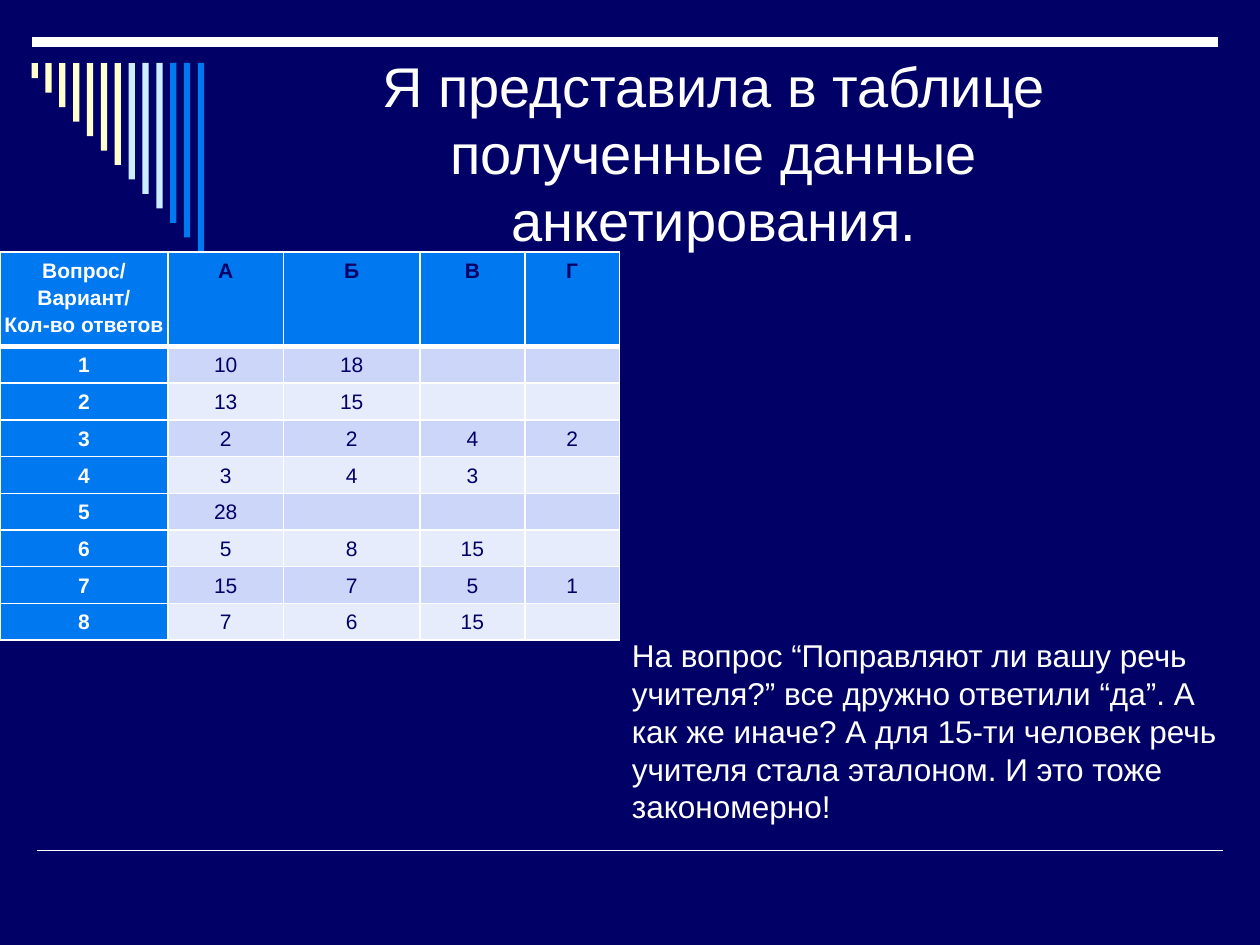
from copy import deepcopy

from lxml import etree
from pptx import Presentation
from pptx.dml.color import RGBColor
from pptx.enum.shapes import MSO_CONNECTOR, MSO_SHAPE
from pptx.enum.text import MSO_ANCHOR, PP_ALIGN
from pptx.oxml.ns import qn
from pptx.util import Pt

STRAIGHT = MSO_CONNECTOR.STRAIGHT
RECTANGLE = MSO_SHAPE.RECTANGLE
MIDDLE, TOP = MSO_ANCHOR.MIDDLE, MSO_ANCHOR.TOP
CENTER, LEFT = PP_ALIGN.CENTER, PP_ALIGN.LEFT

NAVY, WHITE, BLUE = "000066", "FFFFFF", "0078F0"
CREAM, PALE_BLUE = "FFFFCC", "CCECFF"
BAND_COLORS = ["CCD6F9", "E7ECFC"]
BAR_COLORS = [CREAM] * 7 + [PALE_BLUE] * 3 + [BLUE] * 3

COLUMN_WIDTHS = [96, 66, 78, 60, 54]
HEADER_HEIGHT, ROW_HEIGHT = 54, 21
ANSWERS = [
    ["Вопрос/\nВариант/\nКол-во ответов", "А", "Б", "В", "Г"],
    ["1", "10", "18", "", ""],
    ["2", "13", "15", "", ""],
    ["3", "2", "2", "4", "2"],
    ["4", "3", "4", "3", ""],
    ["5", "28", "", "", ""],
    ["6", "5", "8", "15", ""],
    ["7", "15", "7", "5", "1"],
    ["8", "7", "6", "15", ""],
]
TITLE = "Я представила в таблице полученные данные анкетирования."
COMMENT = (
    "На вопрос “Поправляют ли вашу речь учителя?” все дружно ответили “да”. "
    "А как же иначе? А для 15-ти человек речь учителя стала эталоном. "
    "И это тоже закономерно!"
)


def rgb(code):
    """Turn a hex string into a colour."""
    return RGBColor.from_string(code)


def paint(target, code):
    """Give a shape, cell or background a solid fill."""
    target.fill.solid()
    target.fill.fore_color.rgb = rgb(code)


def write(frame, text, size=12, color=WHITE, bold=False, align=LEFT, spacing=None):
    """Write one formatted paragraph, keeping its line breaks and empty height."""
    paragraph = frame.paragraphs[0]
    paragraph.alignment = align
    if spacing:
        paragraph.line_spacing = spacing
    for index, line in enumerate(text.split("\n")):
        if index:
            paragraph.add_line_break()
        run = paragraph.add_run()
        run.text = line
        run.font.name = "Arial"
        run.font.size = Pt(size)
        run.font.bold = bold
        run.font.color.rgb = rgb(color)
    properties = run.font._rPr
    for line_break in paragraph._p.findall(qn("a:br")):
        line_break.append(deepcopy(properties))
    ending = deepcopy(properties)
    ending.tag = qn("a:endParaRPr")
    paragraph._p.append(ending)
    if not text:
        paragraph._p.remove(run._r)


def add_text(slide, text, left, top, width, height, anchor=TOP, **style):
    """Add a wrapping text box."""
    box = slide.shapes.add_textbox(Pt(left), Pt(top), Pt(width), Pt(height))
    box.text_frame.word_wrap = True
    box.text_frame.vertical_anchor = anchor
    write(box.text_frame, text, **style)


def add_rule(slide, left, right, y, weight):
    """Add a horizontal white line."""
    rule = slide.shapes.add_connector(STRAIGHT, Pt(left), Pt(y), Pt(right), Pt(y))
    rule.line.color.rgb = rgb(WHITE)
    rule.line.width = Pt(weight)
    etree.SubElement(rule._element.spPr, qn("a:effectLst"))


def add_bars(slide, left, top):
    """Add the group of hanging bars that grow to the right."""
    group = slide.shapes.add_group_shape()
    for index, color in enumerate(BAR_COLORS):
        bar = group.shapes.add_shape(
            RECTANGLE, Pt(left + 7.92 * index), Pt(top), Pt(3.6), Pt(8.64 + 8.28 * index)
        )
        bar.shadow.inherit = False
        paint(bar, color)
        bar.line.fill.background()


def add_borders(cell, **weights):
    """Draw white cell borders, with the weights given by side."""
    properties = cell._tc.get_or_add_tcPr()
    for index, (side, weight) in enumerate(weights.items()):
        border = etree.Element(qn(f"a:ln{side}"), w=str(Pt(weight)))
        fill = etree.SubElement(border, qn("a:solidFill"))
        etree.SubElement(fill, qn("a:srgbClr"), val=WHITE)
        properties.insert(index, border)


def fill_cell(cell, text, row, column):
    """Style and fill one cell by its place in the table."""
    is_heading = row == 0 or column == 0
    cell.margin_left = cell.margin_right = Pt(2.16)
    cell.margin_top = cell.margin_bottom = Pt(2.16)
    paint(cell, BLUE if is_heading else BAND_COLORS[(row - 1) % 2])
    add_borders(cell, L=1, R=1, T=3 if row == 1 else 1, B=3 if row == 0 else 1)
    write(
        cell.text_frame,
        text,
        color=WHITE if column == 0 else NAVY,
        bold=is_heading,
        align=CENTER,
        spacing=1.15,
    )


def add_answers(slide, left, top):
    """Add the table of survey answers."""
    height = HEADER_HEIGHT + ROW_HEIGHT * (len(ANSWERS) - 1)
    table = slide.shapes.add_table(
        len(ANSWERS), len(COLUMN_WIDTHS), Pt(left), Pt(top), Pt(sum(COLUMN_WIDTHS)), Pt(height)
    ).table
    for column, width in enumerate(COLUMN_WIDTHS):
        table.columns[column].width = Pt(width)
    for row, values in enumerate(ANSWERS):
        table.rows[row].height = Pt(ROW_HEIGHT if row else HEADER_HEIGHT)
        for column, text in enumerate(values):
            fill_cell(table.cell(row, column), text, row, column)


def main():
    """Build the slide and save it."""
    deck = Presentation()
    deck.slide_width, deck.slide_height = Pt(720), Pt(540)
    slide = deck.slides.add_slide(deck.slide_layouts[6])
    paint(slide.background, NAVY)
    add_rule(slide, 21, 699, 486, weight=1)
    add_rule(slide, 18, 696, 24, weight=6)
    add_bars(slide, 18, 36)
    add_text(slide, TITLE, 132, 36, 552, 102, anchor=MIDDLE, size=32, align=CENTER)
    add_answers(slide, 0, 144)
    add_text(slide, COMMENT, 354, 360, 360, 117, size=18)
    deck.save("out.pptx")


if __name__ == "__main__":
    main()
